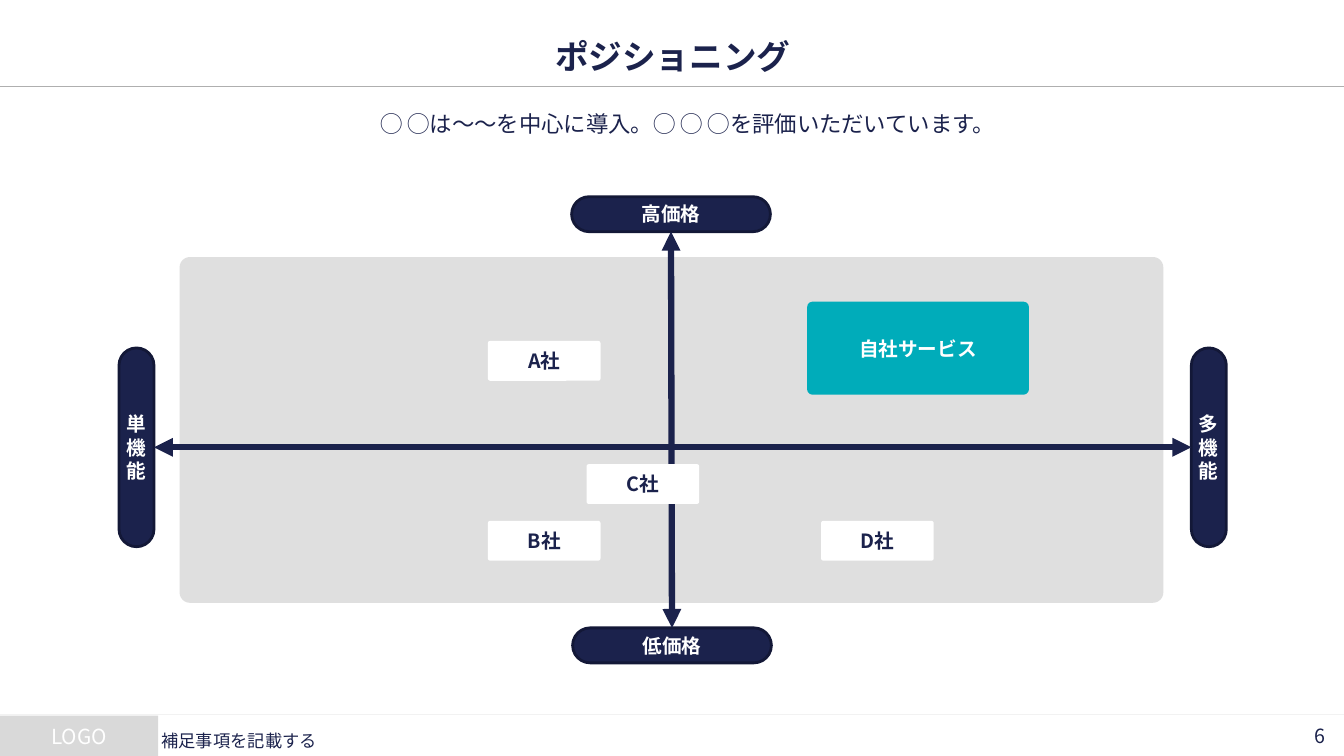
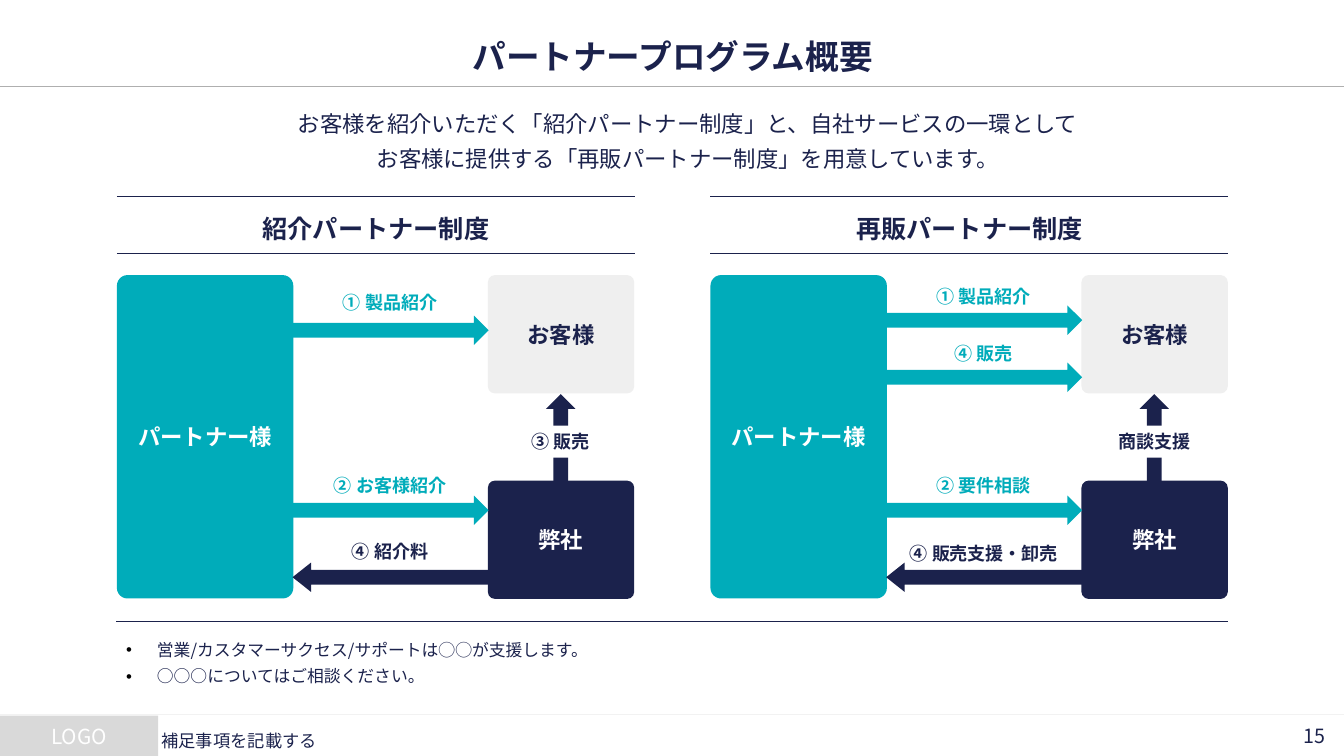
import pptx
import pptx.dml.color
import pptx.enum.lang
import pptx.enum.shapes
import pptx.enum.text
import pptx.oxml.ns
import pptx.util
from lxml import etree

Pt = pptx.util.Pt
SHAPE = pptx.enum.shapes.MSO_SHAPE
ALIGN = pptx.enum.text.PP_ALIGN
ANCHOR = pptx.enum.text.MSO_ANCHOR
JAPANESE = pptx.enum.lang.MSO_LANGUAGE_ID.JAPANESE
qn = pptx.oxml.ns.qn

NAVY, NAVY_EDGE, TEAL, WHITE = "1B224C", "131837", "00ACBA", "FFFFFF"
FIELD_GREY, PALE_GREY, LOGO_GREY = "DFDFDF", "EFEFEF", "D9D9D9"
TITLE_RULE, FOOTER_RULE = "AFAFAF", "F2F2F2"
SANS, LABEL_FONT = "Noto Sans CJK JP", "Arial"
WIDTH, HEIGHT = 960, 540
FOOTER_TOP, FOOTER_HEIGHT = 511.2, 28.8
FOOTNOTE = "補足事項を記載する"

# Positioning map
MAP_TITLE = "ポジショニング"
MAP_LEAD = ["◯ ◯は〜〜を中心に導入。◯ ◯ ◯を評価いただいています。"]
PILL_LENGTH, PILL_THICKNESS = 142, 25
AXIS_ENDS = {  # name: text, left, top, upright
    "top": ("高価格", 408.3, 140.5, False),
    "bottom": ("低価格", 409, 448.5, False),
    "left": ("単機能", 85, 248.5, True),
    "right": ("多機能", 851, 248.5, True),
}
OWN_SERVICE = ("自社サービス", 576.5, 215.5, 158.5, 66.5)
COMPETITORS = [  # text, left, top
    ("A社", 348.5, 243.5),
    ("B社", 348.5, 372),
    ("C社", 419, 331.5),
    ("D社", 586.5, 372),
]
COMPETITOR_SIZE = (80.5, 28.5)

# Partner programme
PROGRAM_TITLE = "パートナープログラム概要"
PROGRAM_LEAD = [
    "お客様を紹介いただく「紹介パートナー制度」と、自社サービスの一環として",
    "お客様に提供する「再販パートナー制度」を用意しています。",
]
PARTNER, CUSTOMER, COMPANY = "パートナー様", "お客様", "弊社"
PROGRAMS = [
    {
        "name": "紹介パートナー制度",
        "to_right": [  # text, label top, arrow top
            ("① 製品紹介", 204.5, 225.4),
            ("② お客様紹介", 335, 354),
        ],
        "to_left": ("④ 紹介料", 382.5, 401.8),
        "upward": "③ 販売",
    },
    {
        "name": "再販パートナー制度",
        "to_right": [
            ("① 製品紹介", 200, 218.2),
            ("④ 販売", 240.5, 259),
            ("② 要件相談", 335, 354),
        ],
        "to_left": ("④ 販売支援・卸売", 383.5, 401.8),
        "upward": "商談支援",
    },
]
PANEL_LEFT, PANEL_PITCH, PANEL_WIDTH = 83.5, 424, 370
NOTES = [
    "営業/カスタマーサクセス/サポートは◯◯が支援します。",
    "○○○についてはご相談ください。",
]


def rgb(value):
    return pptx.dml.color.RGBColor.from_string(value)


def write(shape, lines, size, color, bold=False, font=SANS, align=ALIGN.CENTER,
          anchor=ANCHOR.MIDDLE, spacing=None, insets=(3, 3, 3, 3), bullets=False):
    """Fill a shape with one paragraph per line; insets are left, top, right, bottom."""
    frame = shape.text_frame
    frame.word_wrap = True
    frame.vertical_anchor = anchor
    (frame.margin_left, frame.margin_top,
     frame.margin_right, frame.margin_bottom) = map(Pt, insets)
    frame.text = "\n".join(lines)
    for paragraph in frame.paragraphs:
        paragraph.alignment = align
        if spacing:
            paragraph.line_spacing = spacing
        if bullets:
            add_bullet(paragraph)
        for run in paragraph.runs:
            run.font.size = Pt(size)
            run.font.bold = bold
            run.font.color.rgb = rgb(color)
            run.font.language_id = JAPANESE
            run.font.name = font
            etree.SubElement(run.font._element, qn("a:ea"), typeface=font)


def add_bullet(paragraph):
    properties = paragraph._p.get_or_add_pPr()
    properties.set("marL", str(Pt(22)))
    properties.set("indent", str(-Pt(22)))
    bullet_color = etree.SubElement(properties, qn("a:buClr"))
    etree.SubElement(bullet_color, qn("a:srgbClr"), val="000000")
    etree.SubElement(properties, qn("a:buFont"), typeface="Arial")
    etree.SubElement(properties, qn("a:buChar"), char="•")


def add_text(slide, box, lines, size, color, **style):
    write(slide.shapes.add_textbox(*map(Pt, box)), lines, size, color, **style)


def add_block(slide, kind, box, fill, adjustments=(), edge=None):
    block = slide.shapes.add_shape(kind, *map(Pt, box))
    block.shadow.inherit = False
    block.fill.solid()
    block.fill.fore_color.rgb = rgb(fill)
    if edge:
        block.line.color.rgb = rgb(edge)
        block.line.width = Pt(2)
    else:
        block.line.fill.background()
    for index, value in enumerate(adjustments):
        block.adjustments[index] = value
    return block


def add_card(slide, box, text, fill, color, size):
    card = add_block(slide, SHAPE.ROUNDED_RECTANGLE, box, fill, [0.06])
    write(card, [text], size, color, bold=True)


def add_line(slide, start, end, color, width):
    line = slide.shapes.add_connector(
        pptx.enum.shapes.MSO_CONNECTOR.STRAIGHT, *map(Pt, start + end))
    line.line.color.rgb = rgb(color)
    line.line.width = Pt(width)
    etree.SubElement(line._element.spPr, qn("a:effectLst"))
    return line


def add_axis(slide, start, start_side, end, end_side):
    """Join two pills with a double-headed arrow."""
    axis = add_line(slide, (0, 0), (0, 0), NAVY, 4.5)
    axis.begin_connect(start, start_side)
    axis.end_connect(end, end_side)
    outline = axis.line._get_or_add_ln()
    for end_name in ("a:headEnd", "a:tailEnd"):
        etree.SubElement(outline, qn(end_name), type="triangle")


def add_base_slide(deck, title, lead, number):
    """Add a slide with the shared title, lead text and footer."""
    slide = deck.slides.add_slide(deck.slide_layouts[6])
    add_line(slide, (0, 510.5), (WIDTH, 510.5), FOOTER_RULE, 0.75)
    logo = add_block(slide, SHAPE.RECTANGLE,
                     (0, FOOTER_TOP, 113, FOOTER_HEIGHT), LOGO_GREY)
    write(logo, ["LOGO"], 14.8, WHITE)
    add_line(slide, (0, 62), (WIDTH, 62), TITLE_RULE, 0.75)
    add_text(slide, (62, 24.5, 837, 31), [title], 24, NAVY, bold=True)
    add_text(slide, (84, 69.8, 815, 62), lead, 16, NAVY,
             anchor=ANCHOR.TOP, spacing=1.3)
    add_text(slide, (900, FOOTER_TOP, 60, FOOTER_HEIGHT), [str(number)], 14, NAVY,
             align=ALIGN.RIGHT, insets=(6, 6, 13.5, 6))
    add_text(slide, (112.3, FOOTER_TOP, 734, FOOTER_HEIGHT), [FOOTNOTE], 12.3, NAVY,
             align=ALIGN.LEFT, spacing=1.5)
    return slide


def build_positioning(deck):
    slide = add_base_slide(deck, MAP_TITLE, MAP_LEAD, 6)
    add_block(slide, SHAPE.ROUNDED_RECTANGLE, (128.3, 183.6, 702.7, 247),
              FIELD_GREY, [0.03])
    pills = {}
    for name, (text, left, top, upright) in AXIS_ENDS.items():
        size = (PILL_LENGTH, PILL_THICKNESS)
        if upright:
            size = size[::-1]
        pill = add_block(slide, SHAPE.ROUNDED_RECTANGLE, (left, top, *size),
                         NAVY, [0.5], NAVY_EDGE)
        write(pill, [text], 14, WHITE, bold=True, insets=(0, 3, 0, 3))
        pills[name] = pill
    add_axis(slide, pills["left"], 3, pills["right"], 1)
    add_axis(slide, pills["top"], 2, pills["bottom"], 0)
    name, *box = OWN_SERVICE
    add_card(slide, box, name, TEAL, WHITE, 14)
    for name, left, top in COMPETITORS:
        add_card(slide, (left, top, *COMPETITOR_SIZE), name, WHITE, NAVY, 14)


def add_flow_label(slide, left, top, text, color):
    add_text(slide, (left + 132, top, 126, 23), [text], 12.9, color, bold=True,
             font=LABEL_FONT, insets=(0, 3, 0, 3))


def add_program(slide, left, program):
    for y in (140.5, 181):
        add_line(slide, (left, y), (left + PANEL_WIDTH, y), NAVY, 1)
    add_text(slide, (left, 148.5, PANEL_WIDTH, 29), [program["name"]], 18, NAVY,
             bold=True, font=LABEL_FONT)

    right_column = left + 265
    add_card(slide, (left, 196.5, 126, 231), PARTNER, TEAL, WHITE, 16)
    add_card(slide, (right_column, 196.5, 104.5, 84.5), CUSTOMER, PALE_GREY, NAVY, 16)
    add_card(slide, (right_column, 343.3, 104.5, 84.5), COMPANY, NAVY, WHITE, 16)

    for text, label_top, arrow_top in program["to_right"]:
        add_block(slide, SHAPE.RIGHT_ARROW, (left + 125.5, arrow_top, 140, 21), TEAL)
        add_flow_label(slide, left, label_top, text, TEAL)
    text, label_top, arrow_top = program["to_left"]
    add_block(slide, SHAPE.LEFT_ARROW, (left + 125.5, arrow_top, 153, 21),
              NAVY, [0.5, 0.63])
    add_flow_label(slide, left, label_top, text, NAVY)

    add_block(slide, SHAPE.UP_ARROW, (left + 306.5, 281.5, 21, 62.5), NAVY)
    upward = add_block(slide, SHAPE.RECTANGLE, (right_column, 304, 104, 23), WHITE)
    write(upward, [program["upward"]], 12.9, NAVY, bold=True)


def build_partner_program(deck):
    slide = add_base_slide(deck, PROGRAM_TITLE, PROGRAM_LEAD, 15)
    for index, program in enumerate(PROGRAMS):
        add_program(slide, PANEL_LEFT + index * PANEL_PITCH, program)
    add_line(slide, (83, 444), (877, 444), NAVY, 1)
    add_text(slide, (83, 449.3, 794, 44), NOTES, 12, NAVY, align=ALIGN.LEFT,
             anchor=ANCHOR.TOP, spacing=1.3, insets=(7.2, 3.6, 7.2, 3.6), bullets=True)


def main():
    deck = pptx.Presentation()
    deck.slide_width, deck.slide_height = Pt(WIDTH), Pt(HEIGHT)
    build_positioning(deck)
    build_partner_program(deck)
    deck.save("out.pptx")


if __name__ == "__main__":
    main()
